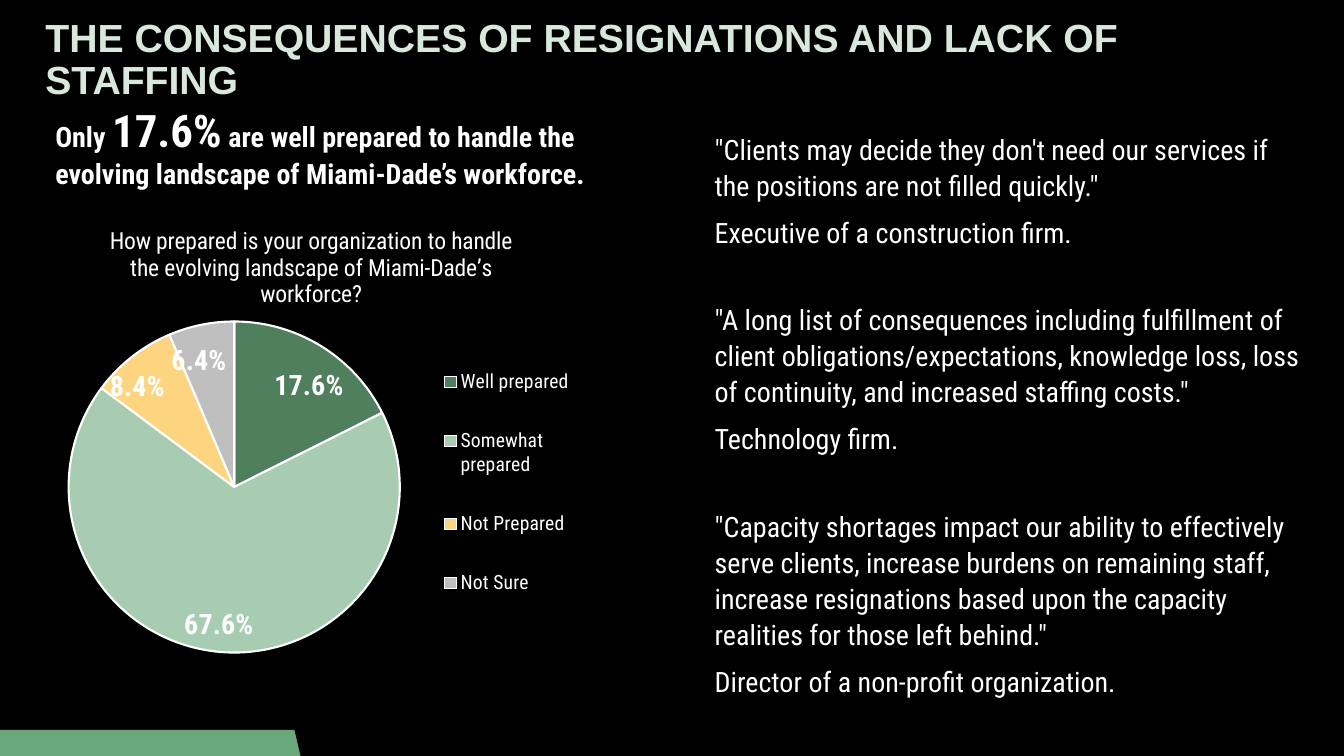
from lxml.etree import SubElement
from pptx import Presentation
from pptx.chart.data import CategoryChartData
from pptx.dml.color import RGBColor
from pptx.enum.chart import XL_CHART_TYPE, XL_LABEL_POSITION, XL_LEGEND_POSITION
from pptx.enum.text import MSO_ANCHOR, MSO_AUTO_SIZE, PP_ALIGN
from pptx.oxml import parse_xml
from pptx.oxml.ns import nsdecls, qn
from pptx.util import Pt

PX = 9144  # 100 px to the inch
FONT = "Roboto Condensed"
COLORS = {
    "black": "000000", "white": "FFFFFF", "mint": "D8E8DD", "green": "6AA87B",
    "sage": "A8CCB2", "yellow": "FDD580", "gray": "BFBFBF",
}


def style(font, size, color="white", bold=False, name=FONT):
    font.size, font.bold, font.name = Pt(size), bold, name
    font.color.rgb = RGBColor.from_string(COLORS[color])


def layout(part, before=None, **sides):
    """Place a chart part by fractions of the chart area; labels shift from their default."""
    label, area = part.tag == qn("c:dLbl"), part.tag == qn("c:plotArea")
    modes = "" if label else '<c:xMode val="edge"/><c:yMode val="edge"/>'
    target = '<c:layoutTarget val="inner"/>' if area else ""
    values = "".join(f'<c:{side} val="{value}"/>' for side, value in sides.items())
    for old in part.findall(qn("c:layout")):
        part.remove(old)
    new = parse_xml(f'<c:layout {nsdecls("c")}><c:manualLayout>{target}{modes}{values}'
                    '</c:manualLayout></c:layout>')
    if before:
        part.find(qn(before)).addnext(new)
    else:
        part.insert(0, new)


deck = Presentation()
deck.slide_width, deck.slide_height = 1333 * PX, 750 * PX
slide = deck.slides.add_slide(deck.slide_layouts[5])
slide.background.fill.solid()
slide.background.fill.fore_color.rgb = RGBColor.from_string(COLORS["black"])
shapes = slide.shapes

# Footer band
pen = shapes.build_freeform(0, 750, scale=PX)
pen.add_line_segments([(298, 750), (292, 724), (0, 724)], close=True)
band = pen.convert_to_shape()
band.fill.solid()
band.fill.fore_color.rgb = RGBColor.from_string(COLORS["green"])
band.line.fill.background()
band.shadow.inherit = False

# Title
title = shapes.title
title.left, title.top, title.width, title.height = [n * PX for n in (45, 23, 1264, 74)]
frame = title.text_frame
frame.text = "THE CONSEQUENCES OF RESIGNATIONS AND LACK OF STAFFING"
frame.auto_size, frame.vertical_anchor = MSO_AUTO_SIZE.NONE, MSO_ANCHOR.MIDDLE
frame.margin_left = frame.margin_top = frame.margin_right = frame.margin_bottom = 0
para = frame.paragraphs[0]
para.alignment, para.line_spacing, para.space_before = PP_ALIGN.LEFT, 0.9, Pt(10)
style(para.font, 28, "mint", True, "Arial")

# Key finding
box = shapes.add_textbox(45 * PX, 97 * PX, 571 * PX, 98 * PX)
box.text_frame.word_wrap = True
para = box.text_frame.paragraphs[0]
for text, size in [
    ("Only ", 20), ("17.6%", 32),
    (" are well prepared to handle the evolving landscape of Miami-Dade’s workforce.", 20),
]:
    run = para.add_run()
    run.text = text
    style(run.font, size, bold=True)

# Quotes
quotes = [
    (124, 603, 127, "\"Clients may decide they don't need our services if the positions "
     "are not filled quickly.\"", "Executive of a construction firm."),
    (293, 603, 163, "\"A long list of consequences including fulfillment of client "
     "obligations/expectations, knowledge loss, loss of continuity, and increased "
     "staffing costs.\"", "Technology firm."),
    (498, 610, 199, "\"Capacity shortages impact our ability to effectively serve clients, "
     "increase burdens on remaining staff, increase resignations based upon the capacity "
     "realities for those left behind.\"", "Director of a non-profit organization."),
]
for top, width, height, quote, source in quotes:
    box = shapes.add_textbox(699 * PX, top * PX, width * PX, height * PX)
    box.text_frame.word_wrap = True
    box.text_frame.text = f"{quote}\n{source}"
    for para in box.text_frame.paragraphs:
        para.line_spacing, para.space_after = 1.07, Pt(8)
        style(para.font, 20)

# Pie chart: name, value, color, label shift
slices = [
    ("Well prepared", 0.176, "green", 0.05, 0.04),
    ("Somewhat prepared", 0.676, "sage", -0.07, -0.01),
    ("Not Prepared", 0.084, "yellow", -0.05, 0.02),
    ("Not Sure", 0.064, "gray", -0.06, 0.03),
]
data = CategoryChartData(number_format="0.0%")
data.categories = [item[0] for item in slices]
data.add_series("Series 1", [item[1] for item in slices])
chart = shapes.add_chart(XL_CHART_TYPE.PIE, 64 * PX, 220 * PX, 510 * PX, 450 * PX, data).chart
style(chart.font, 14)

chart.has_title = True
head = chart.chart_title
head.text_frame.text = ("How prepared is your organization to handle "
                        "the evolving landscape of Miami-Dade’s workforce?")
style(head.text_frame.paragraphs[0].font, 16.8)
layout(head._element, "c:tx", x=0.08, y=0)

chart.has_legend = True
legend = chart.legend
legend.position, legend.include_in_layout = XL_LEGEND_POSITION.RIGHT, False
style(legend.font, 14)
layout(legend._element, "c:legendPos", x=0.72, y=0.25, w=0.28, h=0.65)

plot = chart.plots[0]
plot.vary_by_categories = True
layout(chart._chartSpace.chart.plotArea, x=0, y=0.22, w=0.66, h=0.73)

series = plot.series[0]
labels = series.data_labels
labels.show_value, labels.show_percentage = True, False
labels.number_format, labels.number_format_is_linked = "0.0%", False
labels.position = XL_LABEL_POSITION.INSIDE_END
style(labels.font, 20, bold=True)

for index, (name, value, color, right, down) in enumerate(slices):
    point = series.points[index]
    wedge = point.format
    wedge.fill.solid()
    wedge.fill.fore_color.rgb = RGBColor.from_string(COLORS[color])
    wedge.line.color.rgb = RGBColor.from_string(COLORS["white"])
    wedge.line.width = Pt(1.5)
    if index == 0:
        tint = wedge.fill._xPr.find(qn("a:solidFill"))[0]
        SubElement(tint, qn("a:alpha")).set("val", "76000")
    label = point.data_label
    label.position = XL_LABEL_POSITION.INSIDE_END
    style(label.font, 20, bold=True)
    layout(label._get_or_add_dLbl(), "c:idx", x=right, y=down)

deck.save("out.pptx")
